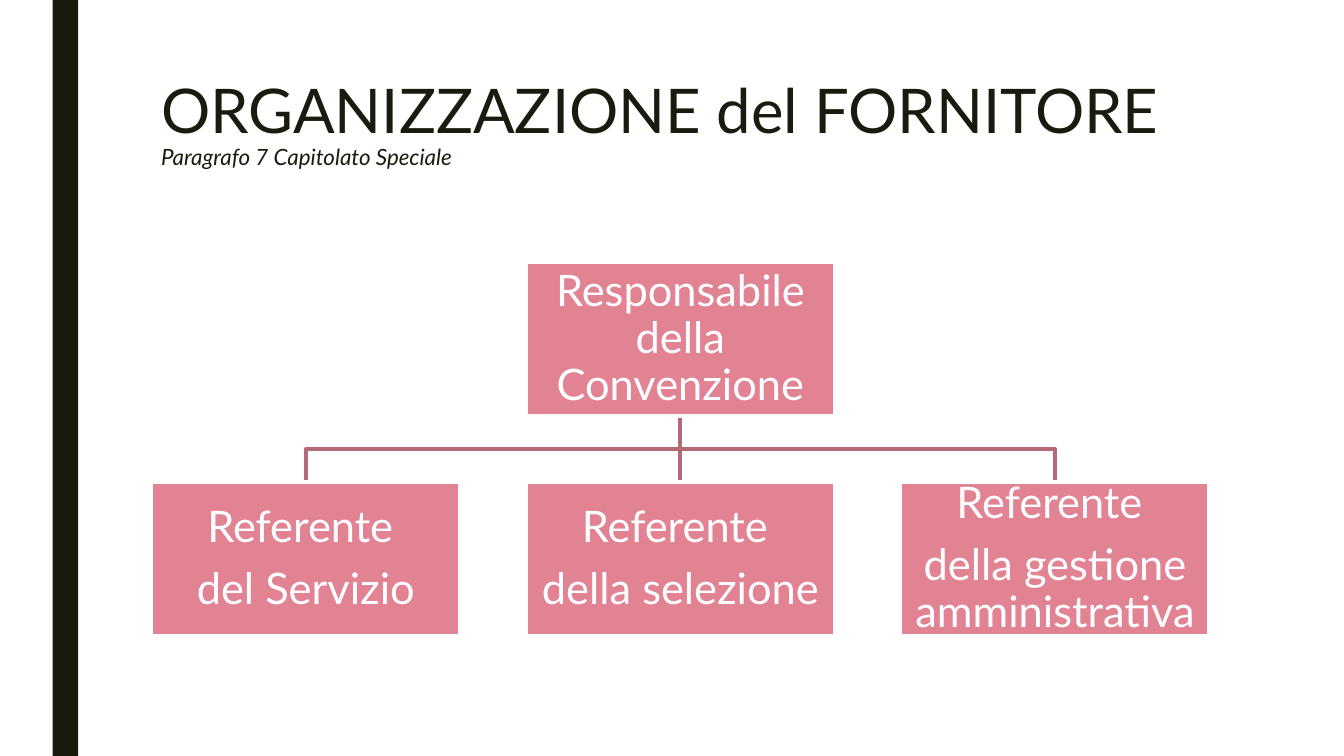
from pptx import Presentation
from pptx.dml.color import RGBColor
from pptx.enum.shapes import MSO_CONNECTOR, MSO_SHAPE
from pptx.enum.text import MSO_ANCHOR, PP_ALIGN
from pptx.oxml.ns import qn
from pptx.util import Cm, Pt
from lxml.etree import SubElement

DARK = RGBColor(0x19, 0x1B, 0x0E)
PINK = RGBColor(0xE2, 0x83, 0x94)
ROSE = RGBColor(0xB5, 0x69, 0x77)
WHITE = RGBColor(0xFF, 0xFF, 0xFF)


def add_run(para, text, size, color, italic=False):
    run = para.add_run()
    run.text = text
    run.font.name = "Lato"
    run.font.size = Pt(size)
    run.font.italic = italic
    run.font.color.rgb = color


def add_box(left, top, lines):
    box = slide.shapes.add_shape(MSO_SHAPE.RECTANGLE, left, top, width, height)
    box.shadow.inherit = False
    box.fill.solid()
    box.fill.fore_color.rgb = PINK
    box.line.color.rgb = WHITE
    box.line.width = Pt(2.75)
    frame = box.text_frame
    frame.word_wrap = True
    frame.vertical_anchor = MSO_ANCHOR.MIDDLE
    frame.margin_left = frame.margin_right = Cm(0.05)
    frame.margin_top = frame.margin_bottom = Cm(0.05)
    for i, line in enumerate(lines):
        para = frame.add_paragraph() if i else frame.paragraphs[0]
        para.alignment = PP_ALIGN.CENTER
        para.line_spacing = 0.9
        para.space_after = Pt(10.85)
        add_run(para, line, 31, WHITE)
    return box


deck = Presentation()
deck.slide_width = Cm(33.87)
deck.slide_height = Cm(19.05)
slide = deck.slides.add_slide(deck.slide_layouts[6])

band = slide.shapes.add_shape(
    MSO_SHAPE.RECTANGLE, Cm(1.33), Cm(0), Cm(0.64), deck.slide_height)
band.shadow.inherit = False
band.fill.solid()
band.fill.fore_color.rgb = DARK
band.line.fill.background()

title = slide.shapes.add_textbox(Cm(3.81), Cm(1.91), Cm(26.67), Cm(4.11))
title.text_frame.word_wrap = True
para = title.text_frame.paragraphs[0]
para.line_spacing = 0.89
add_run(para, "ORGANIZZAZIONE del FORNITORE", 44, DARK)
para.add_line_break()
add_run(para, "Paragrafo 7 Capitolato Speciale", 16, DARK, True)

width, height = Cm(7.79), Cm(3.88)
left, step = Cm(3.81), Cm(9.44)
high, low = Cm(6.61), Cm(12.15)
mid = left + step + width // 2
foot = high + height
bend = (foot + low) // 2

for side in (1, -1):
    end = mid + side * step
    path = slide.shapes.build_freeform(mid, foot)
    path.add_line_segments([(mid, bend), (end, bend), (end, low)], close=False)
    elbow = path.convert_to_shape()
    elbow.shadow.inherit = False
    elbow.fill.background()
    elbow.line.color.rgb = ROSE
    elbow.line.width = Pt(2.75)

stem = slide.shapes.add_connector(MSO_CONNECTOR.STRAIGHT, mid, foot, mid, low)
stem.line.color.rgb = ROSE
stem.line.width = Pt(2.75)
SubElement(stem._element.spPr, qn("a:effectLst"))

head = add_box(left + step, high, ["Responsabile della Convenzione"])
roles = ["del Servizio", "della selezione", "della gestione amministrativa"]
staff = [add_box(left + i * step, low, ["Referente ", role])
         for i, role in enumerate(roles)]
stem.begin_connect(head, 2)
stem.end_connect(staff[1], 0)

deck.save("out.pptx")
